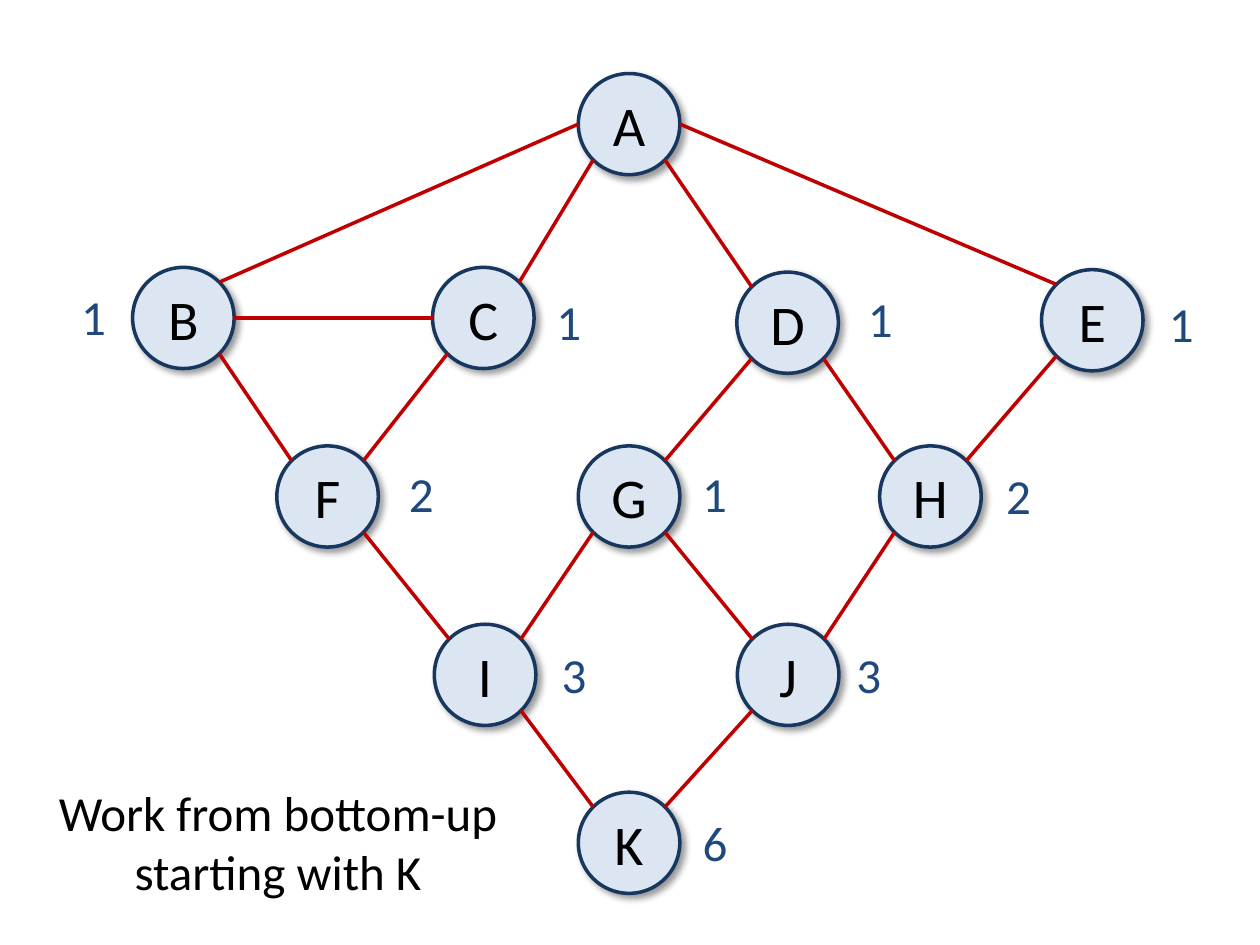
"""Build a slide with a layered graph whose nodes carry shortest-path counts."""
from math import sqrt

from lxml import etree
from pptx import Presentation
from pptx.dml.color import RGBColor
from pptx.enum.shapes import MSO_CONNECTOR, MSO_SHAPE
from pptx.enum.text import MSO_ANCHOR, PP_ALIGN
from pptx.oxml import parse_xml
from pptx.oxml.ns import nsdecls, qn
from pptx.util import Pt

OVAL = MSO_SHAPE.OVAL
STRAIGHT = MSO_CONNECTOR.STRAIGHT
MIDDLE, TOP = MSO_ANCHOR.MIDDLE, MSO_ANCHOR.TOP
CENTER = PP_ALIGN.CENTER

COLORS = {
    "node": "DCE6F2",
    "outline": "17375E",
    "edge": "C00000",
    "count": "1F497D",
    "text": "000000",
}
NODE_WIDTH, NODE_HEIGHT = 58, 57.8
COUNT_WIDTH, COUNT_HEIGHT = 43.9, 41
DIAGONAL = 1 / sqrt(2)
SHADOW = (
    f'<a:effectLst {nsdecls("a")}>'
    '<a:outerShdw blurRad="50800" dist="38100" dir="2700000" algn="tl" rotWithShape="0">'
    '<a:srgbClr val="000000"><a:alpha val="40000"/></a:srgbClr>'
    "</a:outerShdw></a:effectLst>"
)

NODES = {
    "A": (330.5, 42),
    "B": (75.8, 152.8),
    "C": (247.2, 152.8),
    "D": (421.1, 155.5),
    "E": (595.2, 154.1),
    "F": (158.2, 254.8),
    "G": (330.5, 254.8),
    "H": (502.7, 254.8),
    "I": (248.2, 356.7),
    "J": (421.4, 356.7),
    "K": (330.5, 452.7),
}
COUNTS = [
    ("1", 31.5, 160.4),
    ("1", 303, 163),
    ("1", 481, 161.3),
    ("1", 653, 164),
    ("2", 218.8, 261.4),
    ("1", 386.4, 261.4),
    ("2", 560, 262.6),
    ("3", 306, 365),
    ("3", 474.4, 364.6),
    ("6", 386.6, 460.8),
]
SIDES = {
    "left": (-1, 0),
    "right": (1, 0),
    "upper left": (-DIAGONAL, -DIAGONAL),
    "upper right": (DIAGONAL, -DIAGONAL),
    "lower left": (-DIAGONAL, DIAGONAL),
    "lower right": (DIAGONAL, DIAGONAL),
}
EDGES = [("A", "left", "B", "upper right"), ("A", "right", "E", "upper left"),
         ("B", "right", "C", "left")]
EDGES += [(start, "lower left", end, "upper right")
          for start, end in ("AC", "CF", "DG", "EH", "GI", "HJ", "JK")]
EDGES += [(start, "lower right", end, "upper left")
          for start, end in ("AD", "BF", "DH", "FI", "GJ", "IK")]


def write(shape, text, size=28, color="text", anchor=TOP, side_margin=7.2):
    frame = shape.text_frame
    frame.word_wrap = True
    frame.vertical_anchor = anchor
    frame.margin_left = frame.margin_right = Pt(side_margin)
    frame.text = text
    for para in frame.paragraphs:
        para.alignment = CENTER
        for span in para.runs:
            span.font.name = "Calibri"
            span.font.size = Pt(size)
            span.font.color.rgb = RGBColor.from_string(COLORS[color])


def anchor_point(node, side):
    left, top = NODES[node]
    across, down = SIDES[side]
    return (Pt(left + NODE_WIDTH / 2 * (1 + across)),
            Pt(top + NODE_HEIGHT / 2 * (1 + down)))


deck = Presentation()
deck.slide_width, deck.slide_height = Pt(720), Pt(540)
page = deck.slides.add_slide(deck.slide_layouts[6])

for letter, (left, top) in NODES.items():
    node = page.shapes.add_shape(OVAL, Pt(left), Pt(top), Pt(NODE_WIDTH), Pt(NODE_HEIGHT))
    node.fill.solid()
    node.fill.fore_color.rgb = RGBColor.from_string(COLORS["node"])
    node.line.color.rgb = RGBColor.from_string(COLORS["outline"])
    node.line.width = Pt(2)
    node.element.spPr.append(parse_xml(SHADOW))
    write(node, letter, size=32, anchor=MIDDLE, side_margin=0)

for start, start_side, end, end_side in EDGES:
    edge = page.shapes.add_connector(
        STRAIGHT, *anchor_point(start, start_side), *anchor_point(end, end_side))
    edge.line.color.rgb = RGBColor.from_string(COLORS["edge"])
    edge.line.width = Pt(2)
    etree.SubElement(edge.element.spPr, qn("a:effectLst"))

for count, left, top in COUNTS:
    box = page.shapes.add_textbox(Pt(left), Pt(top), Pt(COUNT_WIDTH), Pt(COUNT_HEIGHT))
    write(box, count, color="count")

caption = page.shapes.add_textbox(Pt(23.8), Pt(443.9), Pt(270), Pt(74.9))
write(caption, "Work from bottom-up\nstarting with K")

deck.save("out.pptx")
